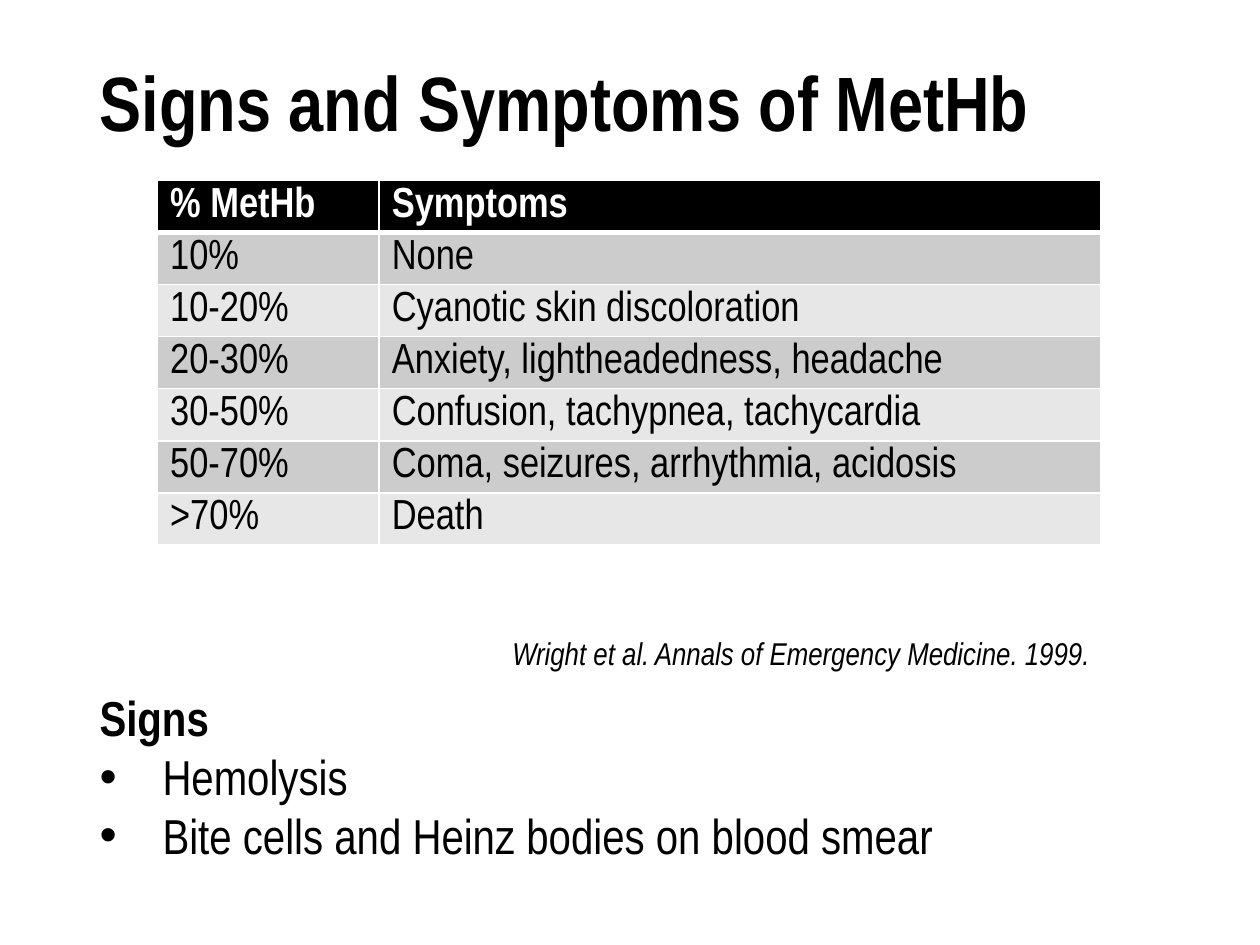
"""Build the slide on signs and symptoms of MetHb."""
from lxml import etree
from pptx import Presentation
from pptx.dml.color import RGBColor
from pptx.enum import text
from pptx.oxml import ns
from pptx.util import Inches, Pt

TITLE = "Signs and Symptoms of MetHb"
SYMPTOMS = [
    ("% MetHb", "Symptoms"),
    ("10%", "None"),
    ("10-20%", "Cyanotic skin discoloration"),
    ("20-30%", "Anxiety, lightheadedness, headache"),
    ("30-50%", "Confusion, tachypnea, tachycardia"),
    ("50-70%", "Coma, seizures, arrhythmia, acidosis"),
    (">70%", "Death"),
]
CITATION = "Wright et al. Annals of Emergency Medicine. 1999."
SIGNS_HEADING = "Signs"
SIGNS = ["Hemolysis", "Bite cells and Heinz bodies on blood smear"]

FONT = "Arial Narrow"
BLACK = RGBColor(0x00, 0x00, 0x00)
WHITE = RGBColor(0xFF, 0xFF, 0xFF)
BANDS = [RGBColor(0xE7, 0xE7, 0xE7), RGBColor(0xCC, 0xCC, 0xCC)]
COLUMN_WIDTHS = [1.76, 5.73]
TABLE_HEIGHT = 2.89


def style(paragraph, size, color=BLACK, bold=False, italic=False):
    font = paragraph.font
    font.name, font.size = FONT, Pt(size)
    font.bold, font.italic = bold, italic
    font.color.rgb = color


def place(shape, left, top, width, height):
    shape.left, shape.top = Inches(left), Inches(top)
    shape.width, shape.height = Inches(width), Inches(height)


def add_borders(cell, widths):
    properties = cell._tc.get_or_add_tcPr()
    for side, width in widths.items():
        line = etree.SubElement(properties, ns.qn(f"a:ln{side}"), w=str(Pt(width)))
        fill = etree.SubElement(line, ns.qn("a:solidFill"))
        etree.SubElement(fill, ns.qn("a:srgbClr"), val=str(WHITE))


def set_bullet(paragraph, bullet=None):
    properties = paragraph._p.get_or_add_pPr()
    indent = Inches(0.5) if bullet else 0
    properties.set("marL", str(indent))
    properties.set("indent", str(-indent))
    if bullet:
        etree.SubElement(properties, ns.qn("a:buFont"), typeface="Arial")
        etree.SubElement(properties, ns.qn("a:buChar"), char=bullet)
    else:
        etree.SubElement(properties, ns.qn("a:buNone"))


def add_title(slide):
    title = slide.shapes.title
    place(title, 0.69, 0.4, 8.62, 0.89)
    frame = title.text_frame
    frame.text = TITLE
    frame.vertical_anchor = text.MSO_ANCHOR.MIDDLE
    frame.auto_size = text.MSO_AUTO_SIZE.NONE
    heading = frame.paragraphs[0]
    heading.alignment = text.PP_ALIGN.LEFT
    heading.line_spacing = 0.9
    style(heading, 44, bold=True)


def add_symptoms(slide):
    table = slide.shapes.add_table(
        len(SYMPTOMS), len(COLUMN_WIDTHS), Inches(1.25), Inches(1.43),
        Inches(sum(COLUMN_WIDTHS)), Inches(TABLE_HEIGHT)).table
    for column, width in zip(table.columns, COLUMN_WIDTHS):
        column.width = Inches(width)
    for row, entries in enumerate(SYMPTOMS):
        header = row == 0
        for column, entry in enumerate(entries):
            cell = table.cell(row, column)
            cell.text = entry
            add_borders(cell, {"L": 1, "R": 1, "T": 3 if row == 1 else 1,
                               "B": 3 if header else 1})
            cell.fill.solid()
            cell.fill.fore_color.rgb = BLACK if header else BANDS[row % 2]
            style(cell.text_frame.paragraphs[0], 24,
                  WHITE if header else BLACK, bold=header)


def add_citation(slide):
    frame = slide.shapes.add_textbox(
        Inches(1.9), Inches(4.98), Inches(6.85), Inches(0.4)).text_frame
    frame.word_wrap = True
    frame.text = CITATION
    citation = frame.paragraphs[0]
    citation.alignment = text.PP_ALIGN.RIGHT
    style(citation, 18, italic=True)


def add_signs(slide):
    body = slide.placeholders[1]
    place(body, 0.69, 5.41, 8.62, 1.51)
    frame = body.text_frame
    frame.text = "\n".join([SIGNS_HEADING, *SIGNS])
    frame.auto_size = text.MSO_AUTO_SIZE.NONE
    for index, paragraph in enumerate(frame.paragraphs):
        paragraph.space_before = Pt(0)
        set_bullet(paragraph, "•" if index else None)
        style(paragraph, 28, bold=index == 0)


def main():
    deck = Presentation()
    deck.slide_width, deck.slide_height = Inches(10), Inches(7.5)
    slide = deck.slides.add_slide(deck.slide_layouts[1])
    add_title(slide)
    add_symptoms(slide)
    add_citation(slide)
    add_signs(slide)
    deck.save("out.pptx")


if __name__ == "__main__":
    main()
